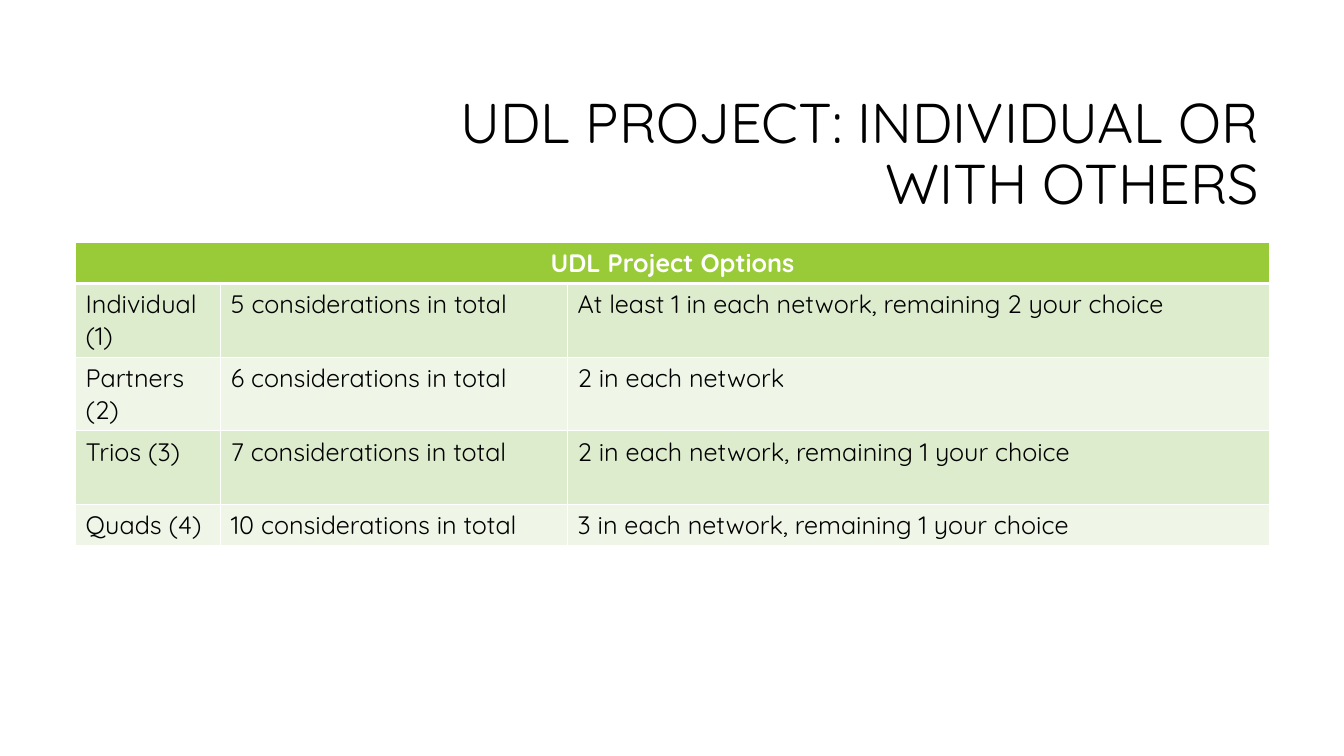
from dataclasses import dataclass

from lxml.etree import SubElement
from pptx import Presentation
from pptx.dml.color import RGBColor as Color
from pptx.enum.text import MSO_ANCHOR as Anchor, PP_ALIGN as Align
from pptx.oxml.ns import qn
from pptx.util import Inches, Pt


@dataclass(frozen=True)
class Theme:
    font: str = "Quicksand"
    title_size: int = 40
    table_size: int = 18
    ink: str = "000000"
    white: str = "FFFFFF"
    header: str = "99CB38"
    bands: tuple = ("DEECCE", "EFF6E8")
    thin: int = 1
    thick: int = 3


theme = Theme()


def add_span(para, text, size, color, bold=False):
    span = para.add_run()
    span.text = text
    span.font.name = theme.font
    span.font.size = Pt(size)
    span.font.bold = bold
    span.font.color.rgb = Color.from_string(color)


def add_border(cell, side, width):
    line = SubElement(cell._tc.get_or_add_tcPr(), qn(f"a:ln{side}"), w=str(Pt(width)))
    fill = SubElement(line, qn("a:solidFill"))
    SubElement(fill, qn("a:srgbClr"), val=theme.white)


deck = Presentation()
deck.slide_width = Inches(13.33)
deck.slide_height = Inches(7.5)
page = deck.slides.add_slide(deck.slide_layouts[5])

title = page.shapes.title
title.left, title.top = Inches(3.17), Inches(0.84)
title.width, title.height = Inches(9.42), Inches(1.41)
title.text_frame.word_wrap = True
title.text_frame.vertical_anchor = Anchor.MIDDLE
para = title.text_frame.paragraphs[0]
para.alignment = Align.RIGHT
para.line_spacing = 0.9
add_span(para, "UDL PROJECT: INDIVIDUAL OR WITH OTHERS", theme.title_size, theme.ink)

options = [
    ("UDL Project Options", "", ""),
    ("Individual (1)", "5 considerations in total", "At least 1 in each network, remaining 2 your choice"),
    ("Partners (2)", "6 considerations in total", "2 in each network"),
    ("Trios (3)", "7 considerations in total", "2 in each network, remaining 1 your choice"),
    ("Quads (4)", "10 considerations in total", "3 in each network, remaining 1 your choice"),
]
column_widths = [1.44, 3.44, 6.96]
row_heights = [0.41, 0.73, 0.73, 0.73, 0.41]

table = page.shapes.add_table(
    len(options), len(column_widths), Inches(0.75), Inches(2.4),
    Inches(sum(column_widths)), Inches(sum(row_heights)),
).table
for column, width in zip(table.columns, column_widths):
    column.width = Inches(width)
for row, height in zip(table.rows, row_heights):
    row.height = Inches(height)
table.cell(0, 0).merge(table.cell(0, len(column_widths) - 1))

for row_index, texts in enumerate(options):
    is_header = row_index == 0
    fill_color = theme.header if is_header else theme.bands[(row_index - 1) % 2]
    for column_index, text in enumerate(texts):
        cell = table.cell(row_index, column_index)
        cell.margin_left = cell.margin_right = Inches(0.1)
        cell.margin_top = cell.margin_bottom = Inches(0.05)
        for side in "LRTB":
            under_header = (row_index, side) in ((0, "B"), (1, "T"))
            add_border(cell, side, theme.thick if under_header else theme.thin)
        cell.fill.solid()
        cell.fill.fore_color.rgb = Color.from_string(fill_color)
        if text:
            para = cell.text_frame.paragraphs[0]
            para.alignment = Align.CENTER if is_header else Align.LEFT
            add_span(para, text, theme.table_size, theme.white if is_header else theme.ink, is_header)

deck.save("out.pptx")
